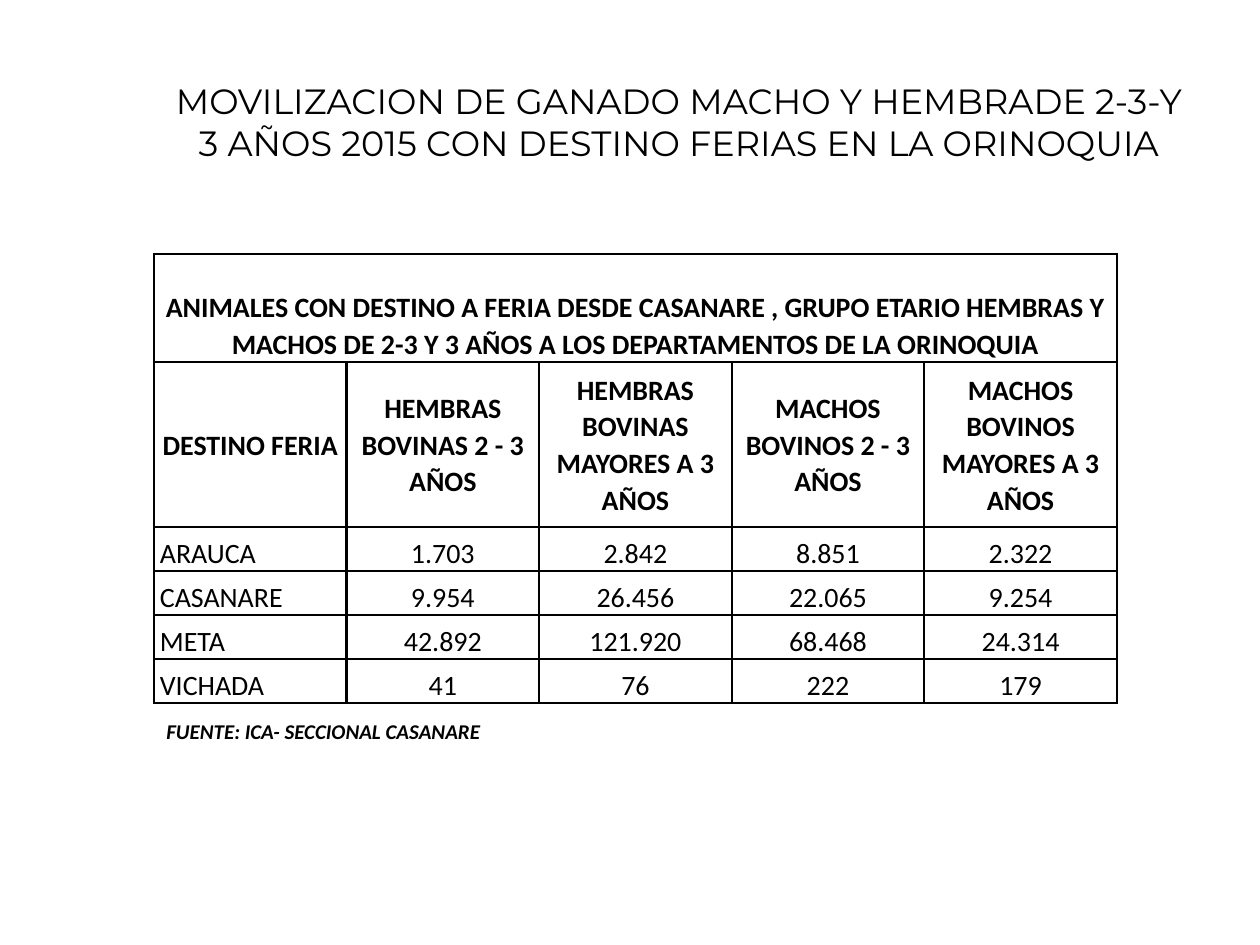
from lxml import etree
from pptx import Presentation
from pptx.dml.color import RGBColor
from pptx.enum.text import MSO_ANCHOR, PP_ALIGN
from pptx.oxml.ns import qn
from pptx.util import Emu, Pt

CENTER, LEFT = PP_ALIGN.CENTER, PP_ALIGN.LEFT
TOP, MIDDLE, BOTTOM = MSO_ANCHOR.TOP, MSO_ANCHOR.MIDDLE, MSO_ANCHOR.BOTTOM
BLACK = RGBColor(0, 0, 0)
EMU_PER_PX = 914400 / 126
BORDER_WIDTH = Pt(1.5)

TITLE = ("MOVILIZACION DE GANADO MACHO Y HEMBRADE 2-3-Y 3 AÑOS 2015 "
         "CON DESTINO FERIAS EN LA ORINOQUIA")
HEADING = ("ANIMALES CON DESTINO A FERIA DESDE CASANARE , GRUPO ETARIO HEMBRAS Y "
           "MACHOS DE 2-3 Y 3 AÑOS A LOS DEPARTAMENTOS DE LA ORINOQUIA")
COLUMN_NAMES = ["DESTINO FERIA", "HEMBRAS BOVINAS 2 - 3 AÑOS",
                "HEMBRAS BOVINAS MAYORES A 3 AÑOS", "MACHOS BOVINOS 2 - 3 AÑOS",
                "MACHOS BOVINOS MAYORES A 3 AÑOS"]
DEPARTMENTS = [
    ["ARAUCA", "1.703", "2.842", "8.851", "2.322"],
    ["CASANARE", "9.954", "26.456", "22.065", "9.254"],
    ["META", "42.892", "121.920", "68.468", "24.314"],
    ["VICHADA", "41", "76", "222", "179"],
]
SOURCE = "FUENTE: ICA- SECCIONAL CASANARE"


def px(length):
    return Emu(round(length * EMU_PER_PX))


def write(frame, text, size, font="Calibri", align=LEFT, bold=False, italic=False):
    paragraph = frame.paragraphs[0]
    paragraph.alignment = align
    run = paragraph.add_run()
    run.text = text
    run.font.name = font
    run.font.size = Pt(size)
    run.font.bold = bold
    run.font.italic = italic
    run.font.color.rgb = BLACK
    return paragraph


def add_text(slide, box, text, size, anchor=TOP, wrap=True, bottom=6, **style):
    frame = slide.shapes.add_textbox(*map(px, box)).text_frame
    frame.word_wrap = wrap
    frame.vertical_anchor = anchor
    frame.margin_bottom = px(bottom)
    write(frame, text, size, **style)


def add_borders(cell):
    properties = cell._tc.get_or_add_tcPr()
    for position, side in enumerate(("a:lnL", "a:lnR", "a:lnT", "a:lnB")):
        line = etree.Element(qn(side), w=str(BORDER_WIDTH))
        fill = etree.SubElement(line, qn("a:solidFill"))
        etree.SubElement(fill, qn("a:srgbClr"), val=str(BLACK))
        properties.insert(position, line)


def fill_cell(cell, text, anchor, align=CENTER, bold=False):
    cell.fill.background()
    cell.margin_left = cell.margin_right = px(6)
    cell.margin_top = cell.margin_bottom = 0
    cell.vertical_anchor = anchor
    if text:
        paragraph = write(cell.text_frame, text, 16, align=align, bold=bold)
        paragraph.line_spacing = 1.07
    add_borders(cell)


def add_cattle_table(slide, left, top, width):
    heading_row = [HEADING] + [""] * (len(COLUMN_NAMES) - 1)
    rows = [heading_row, COLUMN_NAMES] + DEPARTMENTS
    heights = [108, 165] + [44] * len(DEPARTMENTS)
    table = slide.shapes.add_table(
        len(rows), len(COLUMN_NAMES), px(left), px(top), px(width), px(sum(heights))).table
    table.first_row = table.horz_banding = False
    for column in table.columns:
        column.width = px(width / len(COLUMN_NAMES))
    for r, (texts, height) in enumerate(zip(rows, heights)):
        table.rows[r].height = px(height)
        for c, text in enumerate(texts):
            is_department = r > 1 and c == 0
            fill_cell(table.cell(r, c), text,
                      anchor=MIDDLE if r == 1 else BOTTOM,
                      align=LEFT if is_department else CENTER,
                      bold=r < 2)
    table.cell(0, 0).merge(table.cell(0, len(COLUMN_NAMES) - 1))


def main():
    presentation = Presentation()
    presentation.slide_width, presentation.slide_height = px(1260), px(945)
    slide = presentation.slides.add_slide(presentation.slide_layouts[6])
    add_cattle_table(slide, 154, 254, 963)
    add_text(slide, (154, 63, 1050, 158), TITLE, 20, anchor=MIDDLE, bottom=48,
             font="Montserrat", align=CENTER)
    add_text(slide, (154, 712, 344, 38), SOURCE, 12, wrap=False, bold=True, italic=True)
    presentation.save("out.pptx")


if __name__ == "__main__":
    main()
